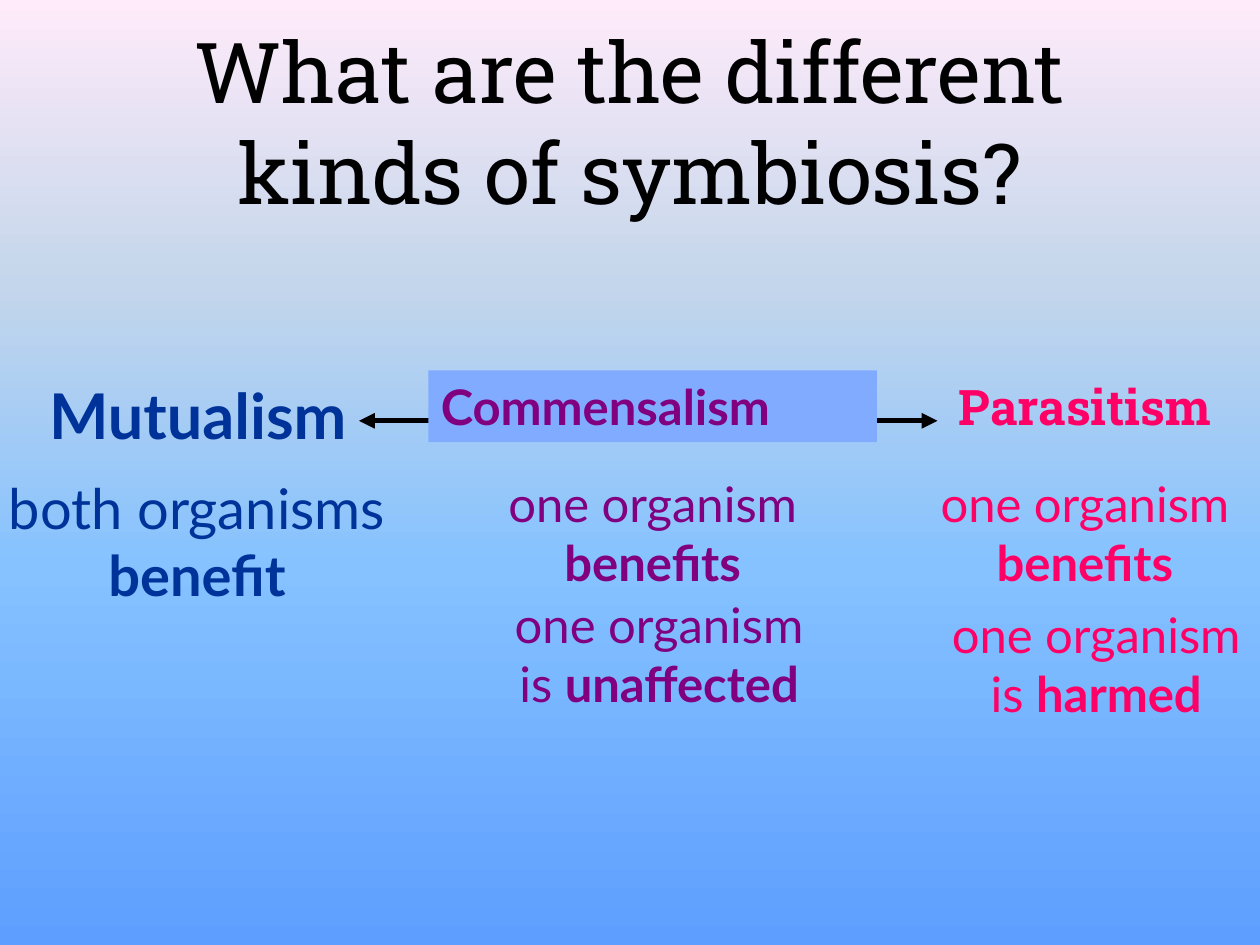
from lxml.etree import SubElement
from pptx import Presentation
from pptx.dml.color import RGBColor
from pptx.enum.shapes import MSO_CONNECTOR as Link, MSO_SHAPE as Form
from pptx.enum.text import MSO_ANCHOR as Anchor, PP_ALIGN as Align
from pptx.oxml.ns import qn
from pptx.util import Inches, Pt

BLACK = RGBColor(0x00, 0x00, 0x00)
NAVY = RGBColor(0x00, 0x33, 0x99)
PLUM = RGBColor(0x80, 0x00, 0x80)
PINK = RGBColor(0xFF, 0x00, 0x66)
SKY = RGBColor(0x81, 0xAB, 0xFF)
FADE = [
    (0, RGBColor(0xFF, 0xEB, 0xFA)),
    (30, RGBColor(0xC4, 0xD6, 0xEB)),
    (60, RGBColor(0x85, 0xC2, 0xFF)),
    (100, RGBColor(0x5E, 0x9E, 0xFF)),
]
SANS, SLAB = "Lato", "Roboto Slab"
HEAD, ROW = 2.94, 3.71


class Board:
    """Hold the current slide and draw styled elements on it."""

    def __init__(self, slide):
        self.slide = slide
        self.shapes = slide.shapes

    def fade(self, stops):
        fill = self.slide.background.fill
        fill.gradient()
        fill.gradient_angle = 270
        group = self.slide.element.find(".//" + qn("a:gsLst"))
        for old in list(group):
            group.remove(old)
        for spot, color in stops:
            stop = SubElement(group, qn("a:gs"), pos=str(spot * 1000))
            SubElement(stop, qn("a:srgbClr"), val=str(color))

    def letter(self, shape, runs, size, color, font, align, wrap=True):
        frame = shape.text_frame
        frame.word_wrap = wrap
        para = frame.paragraphs[0]
        para.alignment = align
        for text, bold in runs:
            run = para.add_run()
            run.text = text
            run.font.name = font
            run.font.size = Pt(size)
            run.font.bold = bold
            run.font.color.rgb = color
        return frame

    def text(self, box, runs, size, color, font=SANS, wrap=True):
        shape = self.shapes.add_textbox(*map(Inches, box))
        return self.letter(shape, runs, size, color, font, Align.CENTER, wrap)

    def label(self, box, text, size, color, fill):
        shape = self.shapes.add_shape(Form.RECTANGLE, *map(Inches, box))
        shape.shadow.inherit = False
        shape.fill.solid()
        shape.fill.fore_color.rgb = fill
        shape.line.fill.background()
        frame = self.letter(shape, [(text, True)], size, color, SANS, Align.LEFT)
        frame.vertical_anchor = Anchor.TOP

    def arrow(self, left, right, top, color, width):
        ends = map(Inches, (left, top, right, top))
        link = self.shapes.add_connector(Link.STRAIGHT, *ends)
        link.line.color.rgb = color
        link.line.width = Pt(width)
        props = link.element.spPr
        line = props.find(qn("a:ln"))
        for end in ("a:headEnd", "a:tailEnd"):
            SubElement(line, qn(end), type="triangle")
        SubElement(props, qn("a:effectLst"))


def main():
    deck = Presentation()
    deck.slide_width, deck.slide_height = Inches(10), Inches(7.5)
    board = Board(deck.slides.add_slide(deck.slide_layouts[6]))
    board.fade(FADE)

    title = [("What are the different kinds of symbiosis?", False)]
    frame = board.text((0.75, 0.33, 8.5, 1.25), title, 48, BLACK, SLAB)
    frame.vertical_anchor = Anchor.MIDDLE

    board.text((0.26, HEAD, 2.62, 0.7), [("Mutualism", True)], 36, NAVY, wrap=False)
    board.text((7.15, HEAD, 2.92, 0.75), [("Parasitism", True)], 28, PINK, SLAB)
    board.arrow(2.85, 7.44, 3.34, BLACK, 3)
    board.label((3.4, HEAD, 3.56, 0.57), "Commensalism", 28, PLUM, SKY)

    for box, lead, stress, size, color in [
        ((-0.04, ROW, 3.21, 1.7), "both organisms ", "benefit", 32, NAVY),
        ((7.22, ROW, 2.78, 1.03), "one organism ", "benefits", 28, PINK),
        ((3.78, ROW, 2.8, 1.03), "one organism ", "benefits", 28, PLUM),
        ((3.92, 4.67, 2.62, 1.37), "one organism is ", "unaffected", 28, PLUM),
        ((7.4, 4.75, 2.6, 1.03), "one organism is ", "harmed", 28, PINK),
    ]:
        board.text(box, [(lead, False), (stress, True)], size, color)

    deck.save("out.pptx")


if __name__ == "__main__":
    main()
